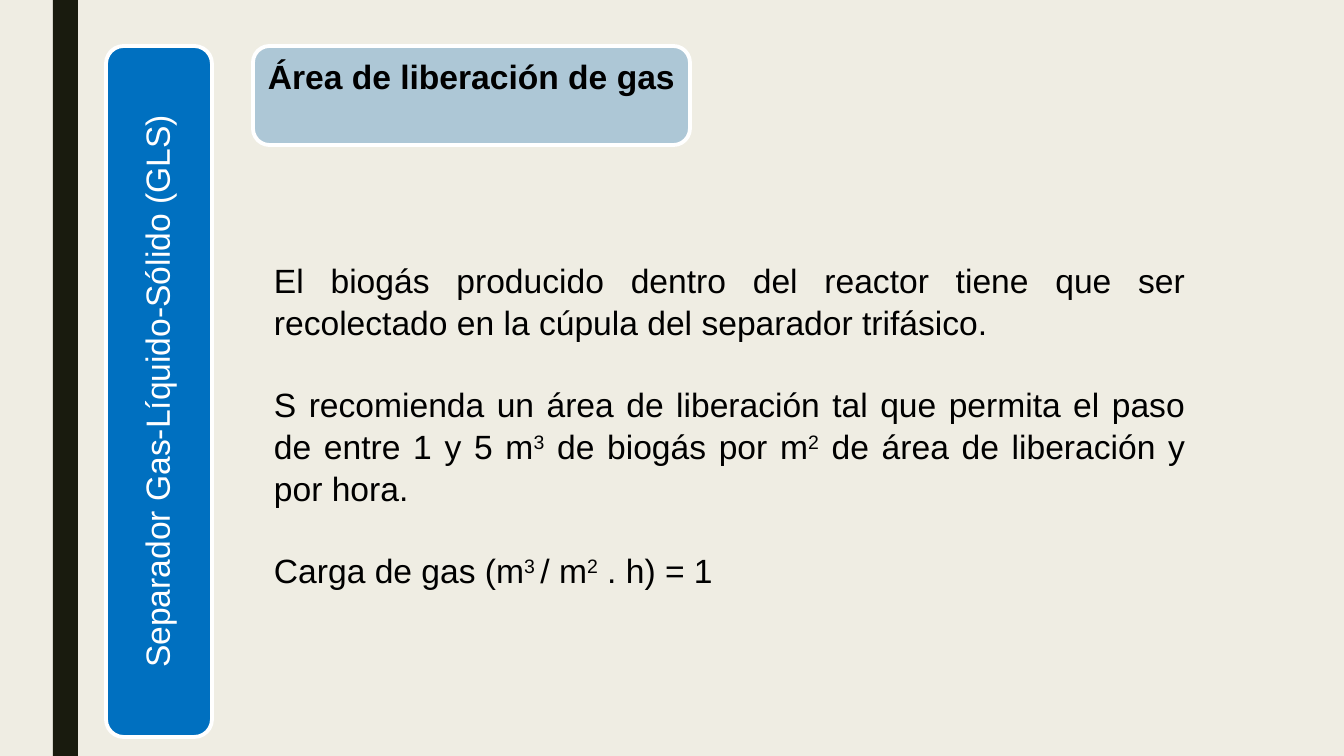
import dataclasses

import pptx
import pptx.dml.color
import pptx.enum.shapes
import pptx.enum.text
import pptx.util

EMU_PER_PX = 9072
SHAPE = pptx.enum.shapes.MSO_SHAPE
ALIGN = pptx.enum.text.PP_ALIGN
ANCHOR = pptx.enum.text.MSO_ANCHOR


def px(n):
    return pptx.util.Emu(n * EMU_PER_PX)


def rgb(code):
    return pptx.dml.color.RGBColor.from_string(code)


@dataclasses.dataclass(frozen=True)
class Theme:
    background: str = "EFEDE3"
    stripe: str = "191B0E"
    blue: str = "0070C0"
    pale: str = "ADC7D6"
    white: str = "FFFFFF"
    black: str = "000000"
    font: str = "Arial"
    size: float = 24
    border: float = 2.75


class Deck:
    def __init__(self, theme):
        self.theme = theme
        self.prs = pptx.Presentation()
        self.prs.slide_width, self.prs.slide_height = px(1344), px(756)
        self.s = self.prs.slides.add_slide(self.prs.slide_layouts[6])
        fill = self.s.background.fill
        fill.solid()
        fill.fore_color.rgb = rgb(theme.background)

    def shape(self, kind, box, fill, border=None):
        sp = self.s.shapes.add_shape(kind, *map(px, box))
        sp.shadow.inherit = False
        sp.fill.solid()
        sp.fill.fore_color.rgb = rgb(fill)
        if border:
            sp.line.color.rgb = rgb(border)
            sp.line.width = pptx.util.Pt(self.theme.border)
        else:
            sp.line.fill.background()
        return sp

    def frame(self, sp, **formats):
        tf = sp.text_frame
        for name, value in ({"word_wrap": True} | formats).items():
            setattr(tf, name, value)
        return tf

    def paragraph(self, p, text, color, bold=False, **formats):
        """Fill p with text; parts between ^ marks are superscript."""
        for name, value in formats.items():
            setattr(p, name, value)
        for i, part in enumerate(text.split("^")):
            r = p.add_run()
            r.text = part
            style = {"name": self.theme.font, "size": pptx.util.Pt(self.theme.size), "bold": bold}
            for name, value in style.items():
                setattr(r.font, name, value)
            r.font.color.rgb = rgb(color)
            if i % 2:
                r.font._element.set("baseline", "30000")

    def panel(self, box, fill, text, color, align, bold=False, vert=None, **frame):
        sp = self.shape(SHAPE.ROUNDED_RECTANGLE, box, fill, self.theme.white)
        inset = dict.fromkeys(("margin_left", "margin_top", "margin_right", "margin_bottom"), px(10))
        tf = self.frame(sp, **(inset | frame))
        if vert:
            tf._txBody.bodyPr.set("vert", vert)
        self.paragraph(tf.paragraphs[0], text, color, bold, alignment=align, line_spacing=0.9)

    def body(self, box, paragraphs):
        tf = self.frame(self.s.shapes.add_textbox(*map(px, box)))
        for i, (text, align) in enumerate(paragraphs):
            p = tf.add_paragraph() if i else tf.paragraphs[0]
            self.paragraph(p, text, self.theme.black, alignment=align,
                           line_spacing=1.04, space_after=pptx.util.Pt(29))


def main():
    t = Theme()
    deck = Deck(t)
    deck.shape(SHAPE.RECTANGLE, (53, 0, 25, 756), t.stripe)
    deck.panel((106, 46, 106, 691), t.blue, "Separador Gas-Líquido-Sólido (GLS)", t.white,
               ALIGN.CENTER, vert="vert270", vertical_anchor=ANCHOR.MIDDLE)
    deck.panel((253, 46, 437, 99), t.pale, "Área de liberación de gas", t.black,
               ALIGN.LEFT, bold=True, vertical_anchor=ANCHOR.TOP, margin_right=0)
    deck.body((264, 253, 931, 367), [
        ("El biogás producido dentro del reactor tiene que ser recolectado "
         "en la cúpula del separador trifásico.", ALIGN.JUSTIFY),
        ("S recomienda un área de liberación tal que permita el paso de entre 1 y 5 m^3^ "
         "de biogás por m^2^ de área de liberación y por hora.", ALIGN.JUSTIFY),
        ("Carga de gas (m^3 ^/ m^2^ . h) = 1", ALIGN.LEFT),
    ])
    deck.prs.save("out.pptx")


if __name__ == "__main__":
    main()
